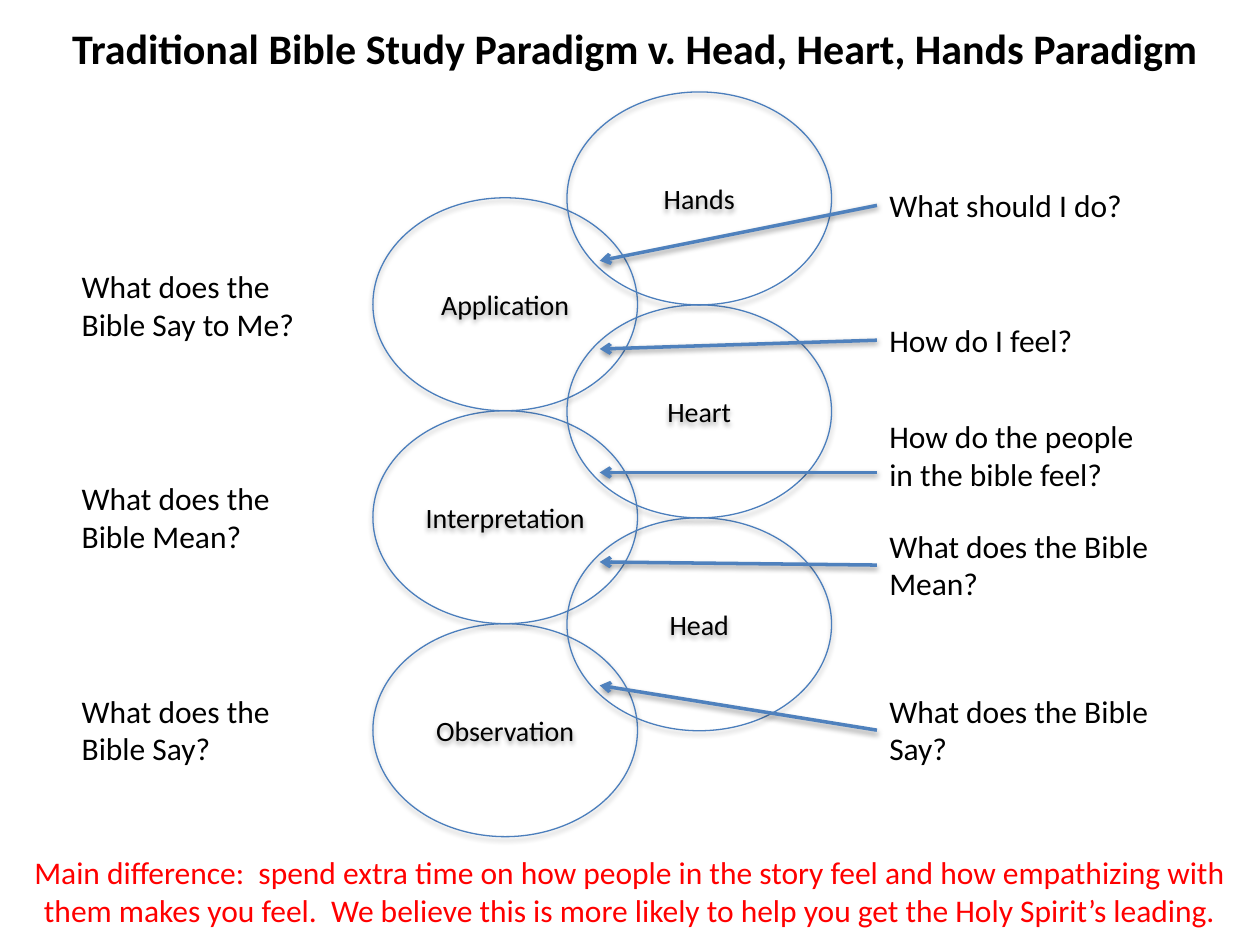
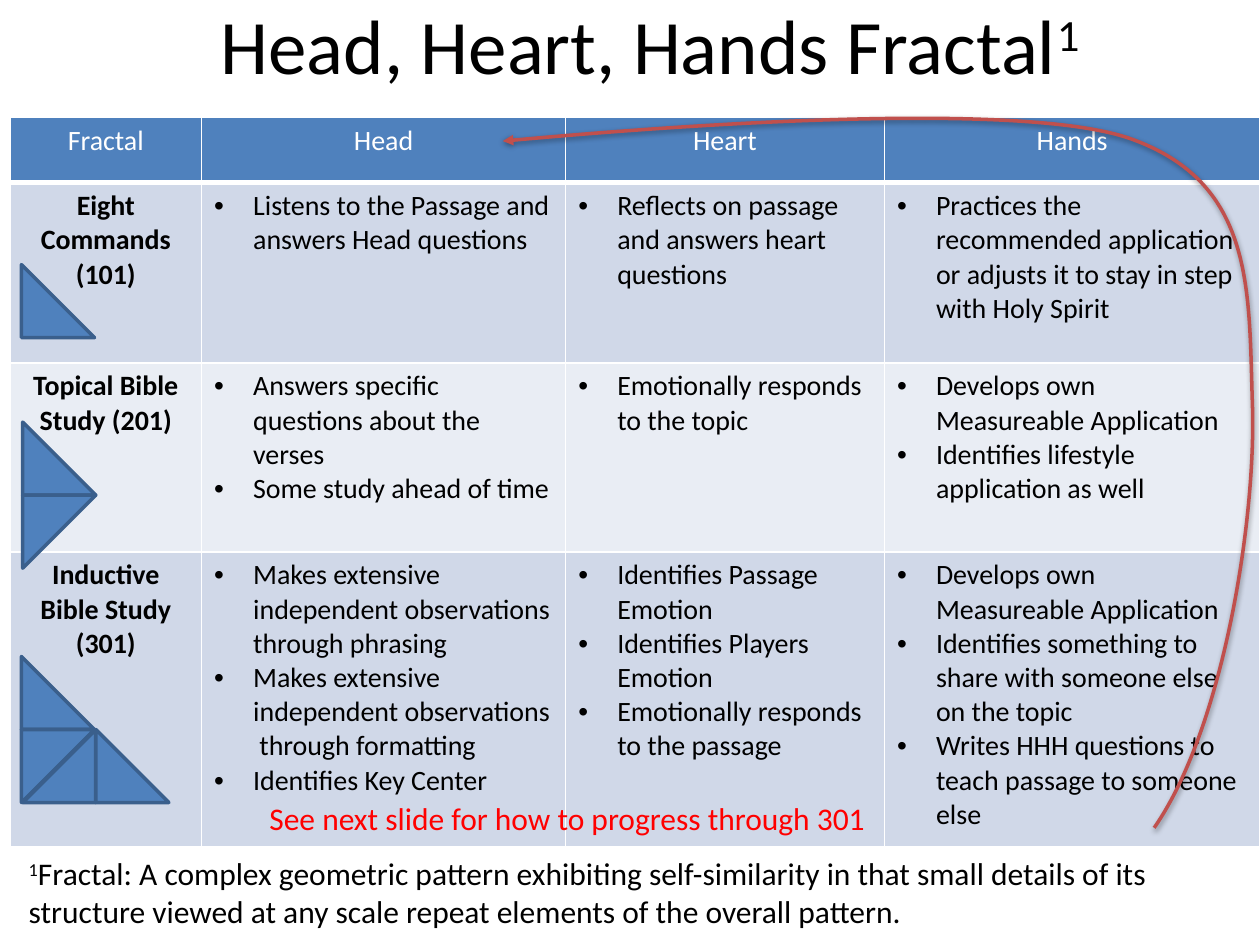
from lxml import etree
from pptx import Presentation
from pptx.dml.color import RGBColor
from pptx.enum.shapes import MSO_CONNECTOR, MSO_SHAPE
from pptx.enum.text import MSO_ANCHOR, MSO_AUTO_SIZE, PP_ALIGN
from pptx.oxml.ns import qn
from pptx.util import Inches, Pt

LEFT, CENTER = PP_ALIGN.LEFT, PP_ALIGN.CENTER
TOP, MIDDLE = MSO_ANCHOR.TOP, MSO_ANCHOR.MIDDLE
GROW, FIXED = MSO_AUTO_SIZE.SHAPE_TO_FIT_TEXT, MSO_AUTO_SIZE.NONE
OVAL, WEDGE = MSO_SHAPE.OVAL, MSO_SHAPE.RIGHT_TRIANGLE
STRAIGHT = MSO_CONNECTOR.STRAIGHT
FONT = "Calibri"
HEX = {
    "ink": "000000", "white": "FFFFFF", "red": "FF0000", "blue": "4F81BD",
    "ring": "4B7EBC", "edge": "3A5F8C", "curve": "C0504D",
    "dark": "D0D8E8", "light": "E9EDF4",
}
RGB = {name: RGBColor.from_string(code) for name, code in HEX.items()}


def write(frame, lines, size, color="ink", bold=False, align=LEFT, dots=False):
    for i, line in enumerate(lines):
        par = frame.paragraphs[0] if i == 0 else frame.add_paragraph()
        par.alignment = align
        if dots:
            props = par._p.get_or_add_pPr()
            props.set("marL", str(Inches(0.31)))
            props.set("indent", str(-Inches(0.31)))
            etree.SubElement(props, qn("a:buFont"), typeface="Arial")
            etree.SubElement(props, qn("a:buChar"), char="•")
        for k, part in enumerate(line.split("^")):
            if not part:
                continue
            run = par.add_run()
            run.text = part
            run.font.name = FONT
            run.font.size = Pt(size)
            run.font.bold = bold
            run.font.color.rgb = RGB[color]
            if k % 2:
                run.font._element.set("baseline", "30000")


def finish(shape, color, width, alpha, dist, head=None):
    shape.line.color.rgb = RGB[color]
    shape.line.width = Pt(width)
    if head:
        etree.SubElement(shape.line._get_or_add_ln(), qn("a:tailEnd"), type=head)
    cast = etree.SubElement(shape._element.spPr, qn("a:effectLst"))
    if alpha:
        shade = etree.SubElement(
            cast, qn("a:outerShdw"), blurRad=str(Pt(3.1)), dist=str(Pt(dist)),
            dir="5400000", rotWithShape="0")
        tone = etree.SubElement(shade, qn("a:srgbClr"), val=HEX["ink"])
        etree.SubElement(tone, qn("a:alpha"), val=str(alpha * 1000))


deck = Presentation()
deck.slide_width, deck.slide_height = Inches(10), Inches(7.5)
blank = deck.slide_layouts[6]
study = deck.slides.add_slide(blank)
fractal = deck.slides.add_slide(blank)

stacks = [
    (2.96, 1.57, ["Application", "Interpretation", "Observation"]),
    (4.5, 0.73, ["Hands", "Heart", "Head"]),
]
for left, top, names in stacks:
    for i in reversed(range(len(names))):
        ring = study.shapes.add_shape(
            OVAL, Inches(left), Inches(top + 1.69 * i), Inches(2.1), Inches(1.69))
        ring.fill.background()
        finish(ring, "ring", 0.75, 35, 1.8)
        ring.text_frame.vertical_anchor = MIDDLE
        write(ring.text_frame, [names[i]], 16, align=CENTER)

rows = [
    [["Fractal"], ["Head"], ["Heart"], ["Hands"]],
    [
        ["Eight Commands (101)"],
        ["Listens to the Passage and answers Head questions"],
        ["Reflects on passage and answers heart questions"],
        ["Practices the recommended application or adjusts it to stay in step with Holy Spirit"],
    ],
    [
        ["Topical Bible Study (201)"],
        ["Answers specific questions about the verses", "Some study ahead of time"],
        ["Emotionally responds to the topic"],
        ["Develops own Measureable Application",
         "Identifies lifestyle application as well"],
    ],
    [
        ["Inductive Bible Study", "(301)"],
        ["Makes extensive independent observations through phrasing",
         "Makes extensive independent observations  through formatting",
         "Identifies Key Center"],
        ["Identifies Passage Emotion", "Identifies Players Emotion",
         "Emotionally responds to the passage"],
        ["Develops own Measureable Application",
         "Identifies something to share with someone else on the topic",
         "Writes HHH questions to teach passage to someone else"],
    ],
]
grid = fractal.shapes.add_table(
    4, 4, Inches(0.08), Inches(0.93), Inches(9.92), Inches(5.8)).table
for col, width in zip(grid.columns, [1.52, 2.89, 2.53, 2.98]):
    col.width = Inches(width)
for row, height in zip(grid.rows, [0.52, 1.43, 1.5, 2.34]):
    row.height = Inches(height)
for r, row in enumerate(rows):
    for c, lines in enumerate(row):
        cell = grid.cell(r, c)
        props = cell._tc.get_or_add_tcPr()
        for side in "LRTB":
            thick = 3 if r == 0 and side == "B" else 1
            rule = etree.SubElement(props, qn("a:ln" + side), w=str(Pt(thick)))
            fill = etree.SubElement(rule, qn("a:solidFill"))
            etree.SubElement(fill, qn("a:srgbClr"), val=HEX["white"])
        cell.fill.solid()
        cell.fill.fore_color.rgb = RGB["blue" if r == 0 else "dark" if r % 2 else "light"]
        label = r == 0 or c == 0
        write(cell.text_frame, lines, 16, "ink" if r else "white",
              bold=r > 0 and c == 0, align=CENTER if label else LEFT, dots=not label)

SIDE = 0.58
clusters = [
    [(0.18, 3.35, 0, False), (0.18, 3.35 + SIDE, 0, True)],
    [(0.17, 2.1, 0, False)],
    [(0.17, 5.21, 0, False), (0.17, 5.79, 0, True),
     (0.18, 5.79, 270, False), (0.18 + SIDE, 5.79, 270, True)],
]
for wedges in clusters:
    home = fractal.shapes
    if len(wedges) > 1:
        home = home.add_group_shape().shapes
    for left, top, turn, flip in wedges:
        wedge = home.add_shape(WEDGE, Inches(left), Inches(top), Inches(SIDE), Inches(SIDE))
        wedge.rotation = turn
        if flip:
            wedge._element.spPr.find(qn("a:xfrm")).set("flipV", "1")
        wedge.fill.solid()
        wedge.fill.fore_color.rgb = RGB["blue"]
        finish(wedge, "edge", 2, 0, 0)

bends = [
    (9.71, 5.78), (9.97, 4.12), (9.94, 3.21),
    (9.91, 2.3), (9.96, 1.45), (8.97, 1.1),
    (7.97, 0.75), (3.99, 1.12), (3.99, 1.12),
]
pen = fractal.shapes.build_freeform(Inches(9.16), Inches(6.57))
pen.add_line_segments([(Inches(x), Inches(y)) for x, y in bends], close=False)
sweep = pen.convert_to_shape()
sweep.fill.background()
finish(sweep, "curve", 2, 38, 1.6, "triangle")
track = next(sweep._element.iter(qn("a:path")))
steps = track.findall(qn("a:lnTo"))
for i in range(0, len(steps), 3):
    arc = etree.SubElement(track, qn("a:cubicBezTo"))
    for step in steps[i:i + 3]:
        arc.append(step[0])
        track.remove(step)

notes = [
    (study, 0.55, 5.44, 2.17, 0.71, "What does the Bible Say?", None),
    (study, 0.55, 3.75, 2.17, 0.71, "What does the Bible Mean?", None),
    (study, 0.55, 2.07, 2.17, 0.71, "What does the Bible Say to Me?", None),
    (study, 6.96, 5.44, 2.47, 0.71, "What does the Bible Say?", 5.44),
    (study, 6.96, 4.13, 2.47, 0.71, "What does the Bible Mean?", 4.46),
    (study, 6.96, 3.4, 2.17, 0.71, "How do the people in the bible feel?", 3.75),
    (study, 6.96, 2.5, 2.17, 0.4, "How do I feel?", 2.77),
    (study, 6.96, 1.43, 2.17, 0.4, "What should I do?", 2.07),
    (fractal, 0.13, 6.73, 9.54, 0.71,
     "^1^Fractal: A complex geometric pattern exhibiting self-similarity in that small "
     "details of its structure viewed at any scale repeat elements of the overall pattern.",
     None),
]
notes[5] = (study, 6.96, 3.26, 2.17, 0.71, "How do the people in the bible feel?", 3.75)
for slide, left, top, width, height, words, goal in notes:
    box = slide.shapes.add_textbox(Inches(left), Inches(top), Inches(width), Inches(height))
    box.text_frame.word_wrap = True
    box.text_frame.auto_size = GROW
    write(box.text_frame, [words], 18)
    if goal:
        start = 3.75 if goal == 3.75 else top + height / 2
        arrow = slide.shapes.add_connector(
            STRAIGHT, Inches(left), Inches(start), Inches(4.76), Inches(goal))
        if start != goal:
            arrow.begin_connect(box, 1)
        finish(arrow, "blue", 2, 38, 1.6, "arrow")

heads = [
    (study, 0.29, 0.08, 9.5, 0.6, 24, True,
     "Traditional Bible Study Paradigm v. Head, Heart, Hands Paradigm"),
    (fractal, 0.66, -0.28, 9, 1.25, 44, False, "Head, Heart, Hands Fractal^1"),
]
for slide, left, top, width, height, size, bold, words in heads:
    title = slide.shapes.add_textbox(Inches(left), Inches(top), Inches(width), Inches(height))
    title.text_frame.word_wrap = True
    title.text_frame.auto_size = FIXED
    title.text_frame.vertical_anchor = MIDDLE
    write(title.text_frame, [words], size, bold=bold, align=CENTER)

alerts = [
    (study, 0, 6.72, 10, 0.71, True, CENTER,
     "Main difference:  spend extra time on how people in the story feel and how "
     "empathizing with them makes you feel.  We believe this is more likely to help "
     "you get the Holy Spirit’s leading."),
    (fractal, 2.04, 6.29, 5, 0.4, False, LEFT,
     "See next slide for how to progress through 301"),
]
for slide, left, top, width, height, wrap, align, words in alerts:
    alert = slide.shapes.add_textbox(Inches(left), Inches(top), Inches(width), Inches(height))
    alert.text_frame.word_wrap = wrap
    alert.text_frame.auto_size = GROW
    alert.text_frame.vertical_anchor = TOP
    write(alert.text_frame, [words], 18, "red", align=align)

deck.save("out.pptx")
